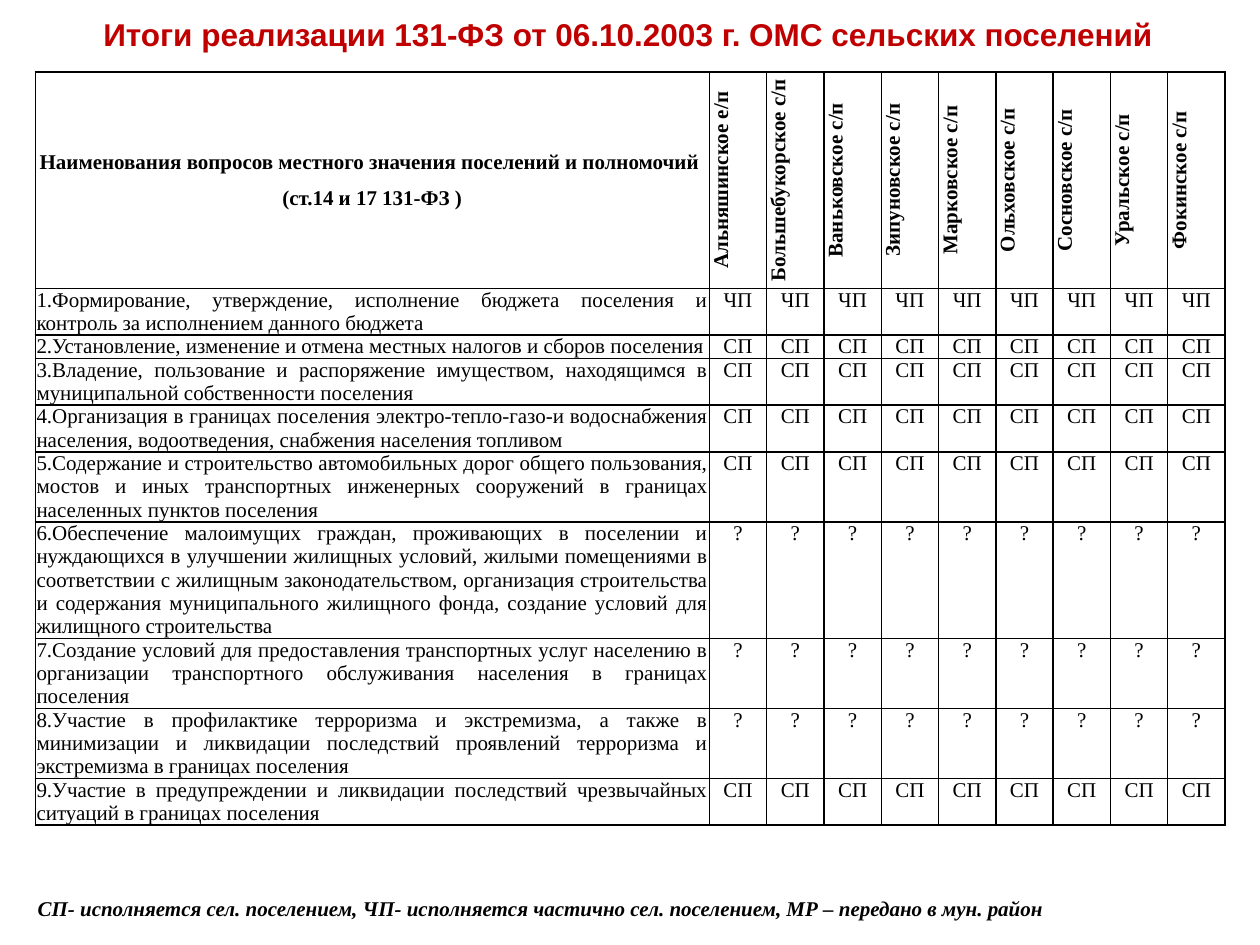
from pptx import Presentation
from pptx.util import Inches, Pt
from pptx.dml.color import RGBColor
from pptx.enum.text import PP_ALIGN, MSO_ANCHOR, MSO_AUTO_SIZE
from pptx.oxml.ns import qn
from lxml.etree import SubElement

# Content
COLORS = {"text": "000000", "title": "C00000", "border": "000000"}
SERIF = "Times New Roman"
TITLE = "Итоги реализации 131-ФЗ от 06.10.2003 г. ОМС сельских поселений"
LEGEND = ("СП- исполняется сел. поселением, ЧП- исполняется частично сел. поселением, "
          "МР – передано в мун. район")
HEADING = ["Наименования вопросов местного значения поселений и полномочий ",
           "(ст.14 и 17 131-ФЗ )"]
SETTLEMENTS = ["Альняшинское е/п", "Большебукорское с/п", "Ваньковское с/п",
               "Зипуновское с/п", "Марковское с/п", "Ольховское с/п",
               "Сосновское с/п", "Уральское с/п", "Фокинское с/п"]
# Issue, status in every settlement, lines of text
ISSUES = [
    ("1.Формирование, утверждение, исполнение бюджета поселения и контроль за "
     "исполнением данного бюджета", "ЧП", 2),
    ("2.Установление, изменение и отмена местных налогов и сборов поселения", "СП", 1),
    ("3.Владение, пользование и распоряжение имуществом, находящимся в "
     "муниципальной собственности поселения", "СП", 2),
    ("4.Организация в границах поселения электро-тепло-газо-и водоснабжения "
     "населения, водоотведения, снабжения населения топливом", "СП", 2),
    ("5.Содержание и строительство автомобильных дорог общего пользования, мостов "
     "и иных транспортных инженерных сооружений в границах населенных пунктов "
     "поселения", "СП", 3),
    ("6.Обеспечение малоимущих граждан, проживающих в поселении и нуждающихся в "
     "улучшении жилищных условий, жилыми помещениями в соответствии с жилищным "
     "законодательством, организация строительства и содержания муниципального "
     "жилищного фонда, создание условий для жилищного строительства", "?", 5),
    ("7.Создание условий для предоставления транспортных услуг населению в "
     "организации транспортного обслуживания населения в границах поселения", "?", 3),
    ("8.Участие в профилактике терроризма и экстремизма, а также в минимизации и "
     "ликвидации последствий проявлений терроризма и экстремизма в границах "
     "поселения", "?", 3),
    ("9.Участие в предупреждении и ликвидации последствий чрезвычайных ситуаций в "
     "границах поселения", "СП", 2),
]

# Layout, inches
LEFT, TOP = 0.28, 0.57
ISSUE_W, STATUS_W = 5.35, 0.455
HEADER_H, LINE_H = 1.72, 0.185


def write(tf, lines, size=12, font=SERIF, color="text", bold=False, italic=False,
          align=PP_ALIGN.CENTER, before=0, after=0):
    for i, line in enumerate(lines):
        p = tf.paragraphs[0] if i == 0 else tf.add_paragraph()
        p.alignment = align
        p.space_before, p.space_after = Pt(before), Pt(after)
        r = p.add_run()
        r.text = line
        r.font.size, r.font.name = Pt(size), font
        r.font.bold, r.font.italic = bold, italic
        r.font.color.rgb = RGBColor.from_string(COLORS[color])


def add_text(s, box, text, anchor=MSO_ANCHOR.TOP, **fmt):
    tf = s.shapes.add_textbox(*map(Inches, box)).text_frame
    tf.word_wrap = True
    tf.auto_size = MSO_AUTO_SIZE.SHAPE_TO_FIT_TEXT
    tf.vertical_anchor = anchor
    write(tf, [text], **fmt)


def fill_cell(cell, lines, vertical=False, anchor=MSO_ANCHOR.TOP, **fmt):
    cell.margin_left = cell.margin_right = Inches(0.01)
    cell.margin_top = cell.margin_bottom = 0
    cell.vertical_anchor = anchor
    write(cell.text_frame, lines, **fmt)
    tc_pr = cell._tc.get_or_add_tcPr()
    if vertical:
        tc_pr.set("vert", "vert270")
    for side in ("lnL", "lnR", "lnT", "lnB"):
        ln = SubElement(tc_pr, qn(f"a:{side}"), w=str(Pt(1)))
        SubElement(SubElement(ln, qn("a:solidFill")), qn("a:srgbClr"),
                   val=COLORS["border"])
    cell.fill.background()


prs = Presentation()
prs.slide_width, prs.slide_height = Inches(10), Inches(7.5)
s = prs.slides.add_slide(prs.slide_layouts[6])

# Table grid
widths = [ISSUE_W] + [STATUS_W] * len(SETTLEMENTS)
heights = [HEADER_H] + [n * LINE_H for _, _, n in ISSUES]
table = s.shapes.add_table(len(heights), len(widths), Inches(LEFT), Inches(TOP),
                           Inches(sum(widths)), Inches(sum(heights))).table
table.first_row = table.horz_banding = False
for col, w in zip(table.columns, widths):
    col.width = Inches(w)
for row, h in zip(table.rows, heights):
    row.height = Inches(h)

# Header row
header = dict(bold=True, anchor=MSO_ANCHOR.MIDDLE)
fill_cell(table.cell(0, 0), HEADING, after=7.5, **header)
for c, name in enumerate(SETTLEMENTS, 1):
    fill_cell(table.cell(0, c), [name], vertical=True, **header)

# Issues and their status
for r, (issue, status, _) in enumerate(ISSUES, 1):
    fill_cell(table.cell(r, 0), [issue], align=PP_ALIGN.JUSTIFY)
    for c in range(1, len(widths)):
        fill_cell(table.cell(r, c), [status])

# Legend and title
add_text(s, (0.2, 7.06, 9.65, 0.3), LEGEND, bold=True, italic=True,
         align=PP_ALIGN.JUSTIFY, before=7.5, after=7.5)
add_text(s, (0.16, 0.07, 9.65, 0.4), TITLE, anchor=MSO_ANCHOR.MIDDLE, size=18,
         font="Arial", color="title", bold=True)

prs.save("out.pptx")
